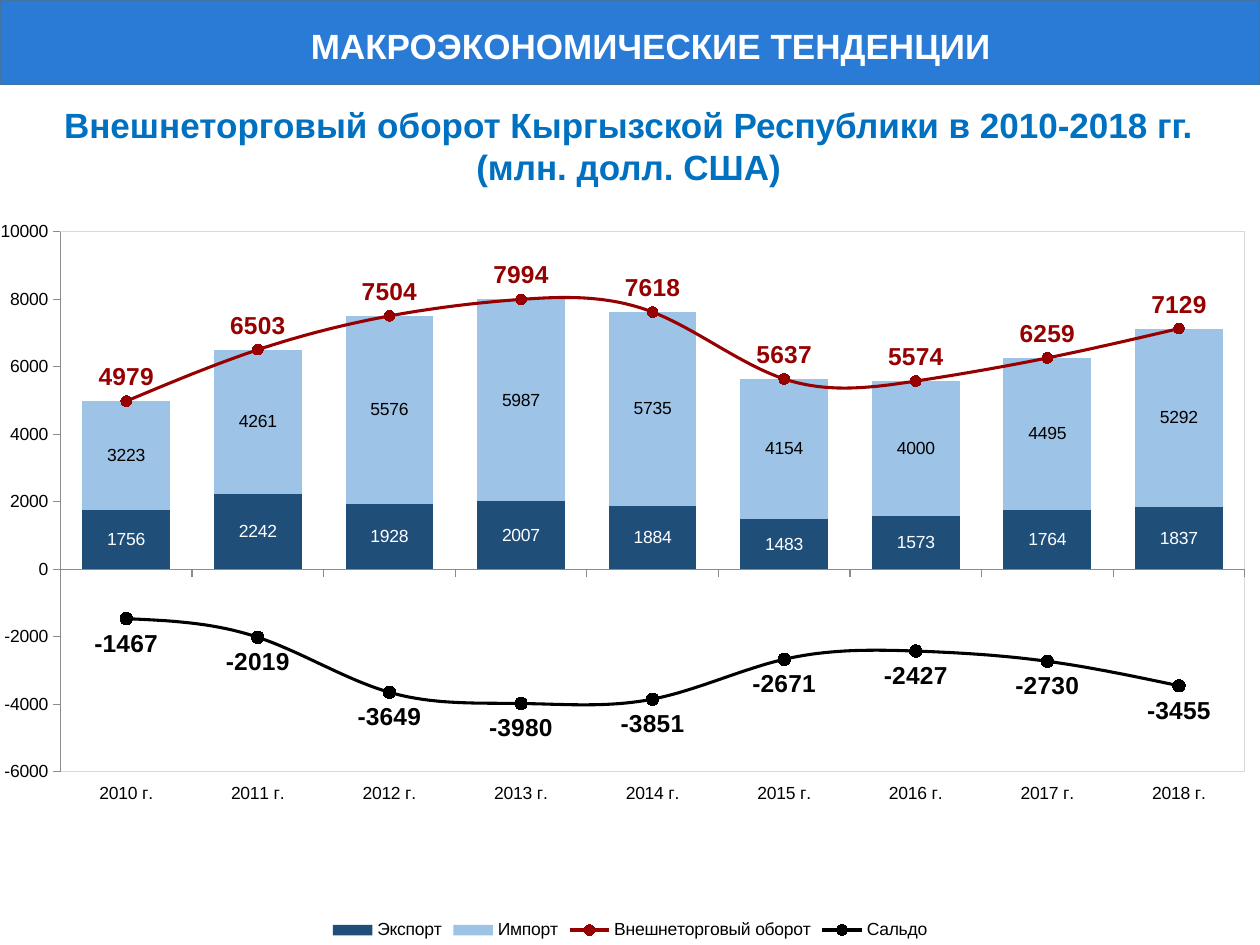
from dataclasses import dataclass

from lxml import etree
from pptx import Presentation
from pptx.chart.data import CategoryChartData
from pptx.dml.color import RGBColor
from pptx.enum.chart import (XL_CHART_TYPE, XL_LABEL_POSITION, XL_LEGEND_POSITION,
                             XL_MARKER_STYLE, XL_TICK_LABEL_POSITION, XL_TICK_MARK)
from pptx.enum.shapes import MSO_SHAPE
from pptx.enum.text import MSO_ANCHOR, PP_ALIGN
from pptx.oxml import parse_xml
from pptx.oxml.ns import nsdecls, qn
from pptx.util import Inches, Pt

RECTANGLE = MSO_SHAPE.RECTANGLE
STACKED = XL_CHART_TYPE.COLUMN_STACKED
CIRCLE = XL_MARKER_STYLE.CIRCLE
ABOVE, BELOW = XL_LABEL_POSITION.ABOVE, XL_LABEL_POSITION.BELOW
LEGEND_BOTTOM = XL_LEGEND_POSITION.BOTTOM
TICK_OUTSIDE, TICK_NONE = XL_TICK_MARK.OUTSIDE, XL_TICK_MARK.NONE
LABELS_LOW = XL_TICK_LABEL_POSITION.LOW
CENTER, MIDDLE = PP_ALIGN.CENTER, MSO_ANCHOR.MIDDLE
WIDTH, HEIGHT = 10, 7.5
CHART_TOP = 1.7
TITLE_ONLY = 5


@dataclass(frozen=True)
class Theme:
    font: str = "Arial"
    band: str = "2A7BD5"
    band_line: str = "43739E"
    white: str = "FFFFFF"
    black: str = "000000"
    heading: str = "0070C0"
    exports: str = "1F4E79"
    imports: str = "9DC3E6"
    turnover: str = "960000"
    axis: str = "8B8B8B"
    frame: str = "D9D9D9"
    heading_size: float = 20
    chart_size: float = 10
    label_size: float = 14
    curve_width: float = 1.75


THEME = Theme()
YEARS = [f"{year} г." for year in range(2010, 2019)]
TRADE = {
    "Экспорт": [1756, 2242, 1928, 2007, 1884, 1483, 1573, 1764, 1837],
    "Импорт": [3223, 4261, 5576, 5987, 5735, 4154, 4000, 4495, 5292],
    "Внешнеторговый оборот": [4979, 6503, 7504, 7994, 7618, 5637, 5574, 6259, 7129],
    "Сальдо": [-1467, -2019, -3649, -3980, -3851, -2671, -2427, -2730, -3455],
}
COLUMN_COUNT = 2
PLOT_SHARES = {"x": 0.048, "y": 0.024, "w": 0.94, "h": 0.739}


def color(value):
    return RGBColor.from_string(value)


def set_font(font, size, value, bold=False):
    font.name, font.size, font.bold = THEME.font, Pt(size), bold
    font.color.rgb = color(value)


def fill_solid(fill, value):
    fill.solid()
    fill.fore_color.rgb = color(value)


def place(shape, left, top, width, height):
    shape.left, shape.top = Inches(left), Inches(top)
    shape.width, shape.height = Inches(width), Inches(height)


def write_heading(shape, lines, value):
    frame = shape.text_frame
    frame.word_wrap = True
    frame.vertical_anchor = MIDDLE
    for index, line in enumerate(lines):
        paragraph = frame.add_paragraph() if index else frame.paragraphs[0]
        paragraph.alignment = CENTER
        run = paragraph.add_run()
        run.text = line
        set_font(run.font, THEME.heading_size, value, bold=True)


def add_title_band(slide, text):
    band = slide.shapes.add_shape(RECTANGLE, 0, 0, Inches(WIDTH), Inches(0.67))
    band.shadow.inherit = False
    fill_solid(band.fill, THEME.band)
    band.line.color.rgb = color(THEME.band_line)
    band.line.width = Pt(1)
    title = slide.shapes.title
    title.element.addprevious(band.element)
    place(title, 0.95, 0.14, 8.43, 0.44)
    write_heading(title, [text], THEME.white)


def add_subtitle(slide, lines):
    box = slide.shapes.add_textbox(0, 0, 0, 0)
    place(box, 0.38, 0.77, 9.22, 0.77)
    write_heading(box, lines, THEME.heading)


def move_to_line_plot(chart, first):
    """Turn the column series from index first on into lines on the same axes."""
    bar_chart = chart.element.find(f".//{qn('c:barChart')}")
    line_chart = parse_xml(f'<c:lineChart {nsdecls("c")}><c:grouping val="standard"/>'
                           '<c:varyColors val="0"/><c:marker val="1"/></c:lineChart>')
    marker = line_chart.find(qn("c:marker"))
    for series in bar_chart.findall(qn("c:ser"))[first:]:
        for invert in series.findall(qn("c:invertIfNegative")):
            series.remove(invert)
        marker.addprevious(series)
    for axis_id in bar_chart.findall(qn("c:axId")):
        etree.SubElement(line_chart, qn("c:axId")).set("val", axis_id.get("val"))
    bar_chart.addnext(line_chart)


def frame_plot_area(chart):
    """Fix the inner plot area by shares of the chart and outline it."""
    plot_area = chart.element.find(f".//{qn('c:plotArea')}")
    for layout in plot_area.findall(qn("c:layout")):
        plot_area.remove(layout)
    modes = "".join(f'<c:{key}Mode val="edge"/>' for key in "xy")
    shares = "".join(f'<c:{key} val="{share}"/>' for key, share in PLOT_SHARES.items())
    plot_area.insert(0, parse_xml(
        f'<c:layout {nsdecls("c")}><c:manualLayout><c:layoutTarget val="inner"/>'
        f'{modes}{shares}</c:manualLayout></c:layout>'))
    plot_area.append(parse_xml(
        f'<c:spPr {nsdecls("c", "a")}><a:noFill/><a:ln w="9525"><a:solidFill>'
        f'<a:srgbClr val="{THEME.frame}"/></a:solidFill></a:ln></c:spPr>'))


def label_values(series, size, value, bold=False):
    labels = series.data_labels
    labels.show_value = True
    labels.number_format, labels.number_format_is_linked = "0", False
    set_font(labels.font, size, value, bold)
    return labels


def style_column(series, fill, label_color):
    fill_solid(series.format.fill, fill)
    series.invert_if_negative = False
    label_values(series, THEME.chart_size, label_color)


def style_curve(series, value, marker_size, label_position):
    series.smooth = True
    series.format.line.color.rgb = color(value)
    series.format.line.width = Pt(THEME.curve_width)
    series.marker.style, series.marker.size = CIRCLE, marker_size
    fill_solid(series.marker.format.fill, value)
    series.marker.format.line.color.rgb = color(value)
    labels = label_values(series, THEME.label_size, value, bold=True)
    labels.position = label_position


def style_axes(chart):
    for axis in (chart.category_axis, chart.value_axis):
        axis.has_major_gridlines = False
        axis.major_tick_mark, axis.minor_tick_mark = TICK_OUTSIDE, TICK_NONE
        axis.format.line.color.rgb = color(THEME.axis)
    chart.category_axis.tick_label_position = LABELS_LOW
    values = chart.value_axis
    values.minimum_scale, values.maximum_scale, values.major_unit = -6000, 10000, 2000
    values.tick_labels.number_format = "0"
    values.tick_labels.number_format_is_linked = False


def add_trade_chart(slide):
    data = CategoryChartData(number_format="0")
    data.categories = YEARS
    for name, values in TRADE.items():
        data.add_series(name, values)
    chart = slide.shapes.add_chart(STACKED, 0, Inches(CHART_TOP), Inches(WIDTH),
                                   Inches(HEIGHT - CHART_TOP), data).chart
    set_font(chart.font, THEME.chart_size, THEME.black)
    chart.has_title = False
    chart.has_legend = True
    chart.legend.position = LEGEND_BOTTOM
    chart.legend.include_in_layout = False
    move_to_line_plot(chart, COLUMN_COUNT)
    columns, curves = chart.plots
    columns.gap_width, columns.overlap = 50, 100
    columns.vary_by_categories = False
    style_column(columns.series[0], THEME.exports, THEME.white)
    style_column(columns.series[1], THEME.imports, THEME.black)
    style_curve(curves.series[0], THEME.turnover, 6, ABOVE)
    style_curve(curves.series[1], THEME.black, 7, BELOW)
    style_axes(chart)
    frame_plot_area(chart)


def main():
    presentation = Presentation()
    presentation.slide_width, presentation.slide_height = Inches(WIDTH), Inches(HEIGHT)
    slide = presentation.slides.add_slide(presentation.slide_layouts[TITLE_ONLY])
    add_title_band(slide, "МАКРОЭКОНОМИЧЕСКИЕ ТЕНДЕНЦИИ")
    add_subtitle(slide, ["Внешнеторговый оборот Кыргызской Республики в 2010-2018 гг.",
                         "(млн. долл. США)"])
    add_trade_chart(slide)
    presentation.save("out.pptx")


if __name__ == "__main__":
    main()
